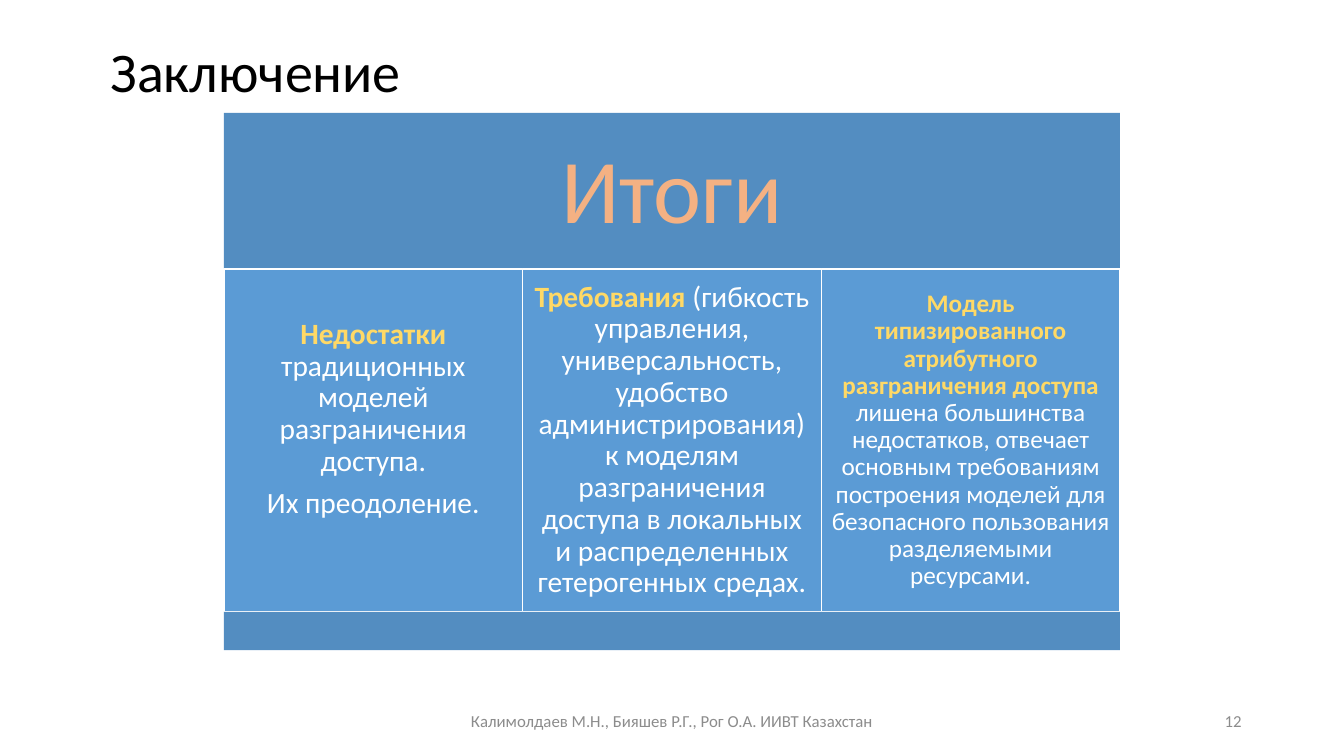
from pptx import Presentation
from pptx.dml.color import RGBColor
from pptx.enum.shapes import MSO_SHAPE
from pptx.enum.text import MSO_ANCHOR, PP_ALIGN
from pptx.util import Inches, Pt

SLIDE_WIDTH = Inches(13.333)
SLIDE_HEIGHT = Inches(7.5)

BLACK = RGBColor(0x00, 0x00, 0x00)
WHITE = RGBColor(0xFF, 0xFF, 0xFF)
GRAY = RGBColor(0x8C, 0x8C, 0x8C)
DARK_BLUE = RGBColor(0x53, 0x8D, 0xC1)
BLUE = RGBColor(0x5B, 0x9B, 0xD5)
ORANGE = RGBColor(0xF4, 0xB1, 0x83)
YELLOW = RGBColor(0xFF, 0xD9, 0x66)

# Shares of the slide, in percent
DIAGRAM_LEFT = 100 / 6
DIAGRAM_WIDTH = 200 / 3
HEADER_TOP, HEADER_HEIGHT = 14.93, 21.6
COLUMNS_TOP, COLUMNS_HEIGHT = 35.6, 45.33
FOOTER_TOP, FOOTER_HEIGHT = 92.67, 5.33

# Font size, side margin, bottom margin, paragraphs of (key words, other words)
COLUMNS = [
    (21, 0.09, 0.51, [
        ("Недостатки ", "традиционных моделей разграничения доступа."),
        ("", "Их преодоление."),
    ]),
    (21, 0.09, 0.09, [
        ("Требования",
         " (гибкость управления, универсальность, удобство "
         "администрирования) к моделям разграничения доступа в локальных "
         "и распределенных гетерогенных средах."),
    ]),
    (18, 0.07, 0.07, [
        ("Модель типизированного атрибутного разграничения доступа ",
         "лишена большинства недостатков, отвечает основным требованиям "
         "построения моделей для безопасного пользования разделяемыми "
         "ресурсами."),
    ]),
]


def set_format(target, values):
    for name, value in values.items():
        setattr(target, name, value)


def area(left, top, width, height):
    """Turn percentages of the slide into lengths."""
    return (int(SLIDE_WIDTH * left / 100), int(SLIDE_HEIGHT * top / 100),
            int(SLIDE_WIDTH * width / 100), int(SLIDE_HEIGHT * height / 100))


def add_run(paragraph, text, size, color, bold=False):
    run = paragraph.add_run()
    run.text = text
    set_format(run.font, {"name": "Calibri", "size": Pt(size), "bold": bold})
    run.font.color.rgb = color


def add_label(slide, box, text, size, color, alignment, anchor):
    frame = slide.shapes.add_textbox(*area(*box)).text_frame
    set_format(frame, {"word_wrap": True, "vertical_anchor": anchor})
    paragraph = frame.paragraphs[0]
    paragraph.alignment = alignment
    add_run(paragraph, text, size, color)


def add_panel(slide, box, fill, outlined=False):
    panel = slide.shapes.add_shape(MSO_SHAPE.RECTANGLE, *area(*box))
    panel.shadow.inherit = False
    panel.fill.solid()
    panel.fill.fore_color.rgb = fill
    if outlined:
        panel.line.color.rgb = WHITE
        panel.line.width = Pt(1)
    else:
        panel.line.fill.background()
    return panel


def fill_panel(panel, paragraphs, size, margin, bottom_margin):
    """Write paragraphs of (text, color, bold) runs, centred in the panel."""
    frame = panel.text_frame
    set_format(frame, {
        "word_wrap": True,
        "vertical_anchor": MSO_ANCHOR.MIDDLE,
        "margin_left": Inches(margin),
        "margin_right": Inches(margin),
        "margin_top": Inches(margin),
        "margin_bottom": Inches(bottom_margin),
    })
    for index, runs in enumerate(paragraphs):
        paragraph = frame.add_paragraph() if index else frame.paragraphs[0]
        set_format(paragraph, {
            "alignment": PP_ALIGN.CENTER,
            "line_spacing": 0.9,
            "space_after": Pt(size * 0.35),
        })
        for text, color, bold in runs:
            if text:
                add_run(paragraph, text, size, color, bold)


def add_columns(slide):
    width = DIAGRAM_WIDTH / len(COLUMNS)
    for index, (size, margin, bottom_margin, texts) in enumerate(COLUMNS):
        box = (DIAGRAM_LEFT + index * width, COLUMNS_TOP, width, COLUMNS_HEIGHT)
        panel = add_panel(slide, box, BLUE, outlined=True)
        paragraphs = [[(key, YELLOW, True), (rest, WHITE, False)]
                      for key, rest in texts]
        fill_panel(panel, paragraphs, size, margin, bottom_margin)


def main():
    presentation = Presentation()
    set_format(presentation, {"slide_width": SLIDE_WIDTH,
                              "slide_height": SLIDE_HEIGHT})
    slide = presentation.slides.add_slide(presentation.slide_layouts[6])

    add_label(slide, (7.5, 4.13, 85, 10.27), "Заключение", 40, BLACK,
              PP_ALIGN.LEFT, MSO_ANCHOR.TOP)

    header = add_panel(
        slide, (DIAGRAM_LEFT, HEADER_TOP, DIAGRAM_WIDTH, HEADER_HEIGHT),
        DARK_BLUE)
    fill_panel(header, [[("Итоги", ORANGE, False)]], 65, 0.27, 0.27)
    add_columns(slide)
    add_panel(slide, (DIAGRAM_LEFT, COLUMNS_TOP + COLUMNS_HEIGHT,
                      DIAGRAM_WIDTH, 5.07), DARK_BLUE)

    add_label(slide, (33.13, FOOTER_TOP, 33.75, FOOTER_HEIGHT),
              "Калимолдаев М.Н., Бияшев Р.Г., Рог О.А. ИИВТ Казахстан",
              12, GRAY, PP_ALIGN.CENTER, MSO_ANCHOR.MIDDLE)
    add_label(slide, (70.63, FOOTER_TOP, 22.5, FOOTER_HEIGHT), "12",
              12, GRAY, PP_ALIGN.RIGHT, MSO_ANCHOR.MIDDLE)

    presentation.save("out.pptx")


if __name__ == "__main__":
    main()
